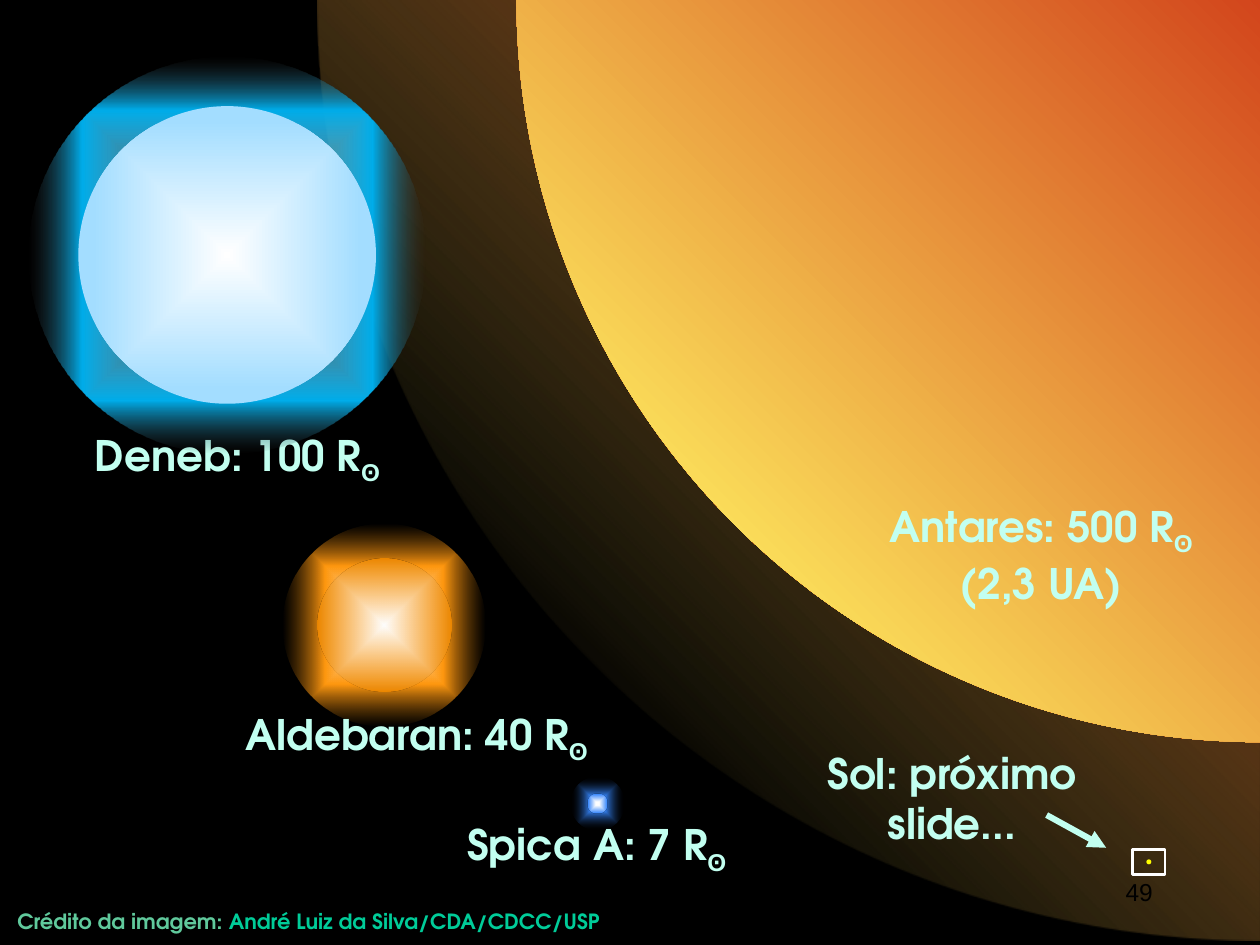
from lxml import etree
from pptx import Presentation
from pptx.dml.color import RGBColor
from pptx.enum.shapes import MSO_CONNECTOR, MSO_SHAPE
from pptx.enum.text import MSO_ANCHOR, PP_ALIGN
from pptx.oxml.ns import qn
from pptx.util import Cm, Pt

OVAL, ARC, RECT = MSO_SHAPE.OVAL, MSO_SHAPE.ARC, MSO_SHAPE.RECTANGLE
LINE = MSO_CONNECTOR.STRAIGHT
LEFT, MID, RIGHT = PP_ALIGN.LEFT, PP_ALIGN.CENTER, PP_ALIGN.RIGHT

BLACK = RGBColor(0, 0, 0)
WHITE = RGBColor(255, 255, 255)
YELLOW = RGBColor(255, 255, 0)
MINT = RGBColor(0xC2, 0xFF, 0xF0)
SAGE = RGBColor(0x60, 0xC9, 0x9C)
GREEN = RGBColor(0x00, 0xCC, 0x99)
GREY = RGBColor(0x38, 0x38, 0x38)
ORANGE = RGBColor(0xFF, 0x98, 0x10)
AMBER = RGBColor(0xEE, 0x88, 0x00)
GOLD = RGBColor(0xFD, 0xE6, 0x5D)
RED = RGBColor(0xC0, 0x00, 0x00)
CORAL = RGBColor(0xFE, 0x73, 0x2F)
SKY = RGBColor(0x69, 0xD8, 0xFF)
BLUE = RGBColor(0x37, 0x88, 0xFF)
CYAN = RGBColor(0x00, 0xAD, 0xEA)
PALE = RGBColor(0xA3, 0xDD, 0xFF)

HEAD = {"name": "TeX Gyre Adventor", "size": Pt(24), "bold": True}
NOTE = {"name": "TeX Gyre Adventor", "size": Pt(12), "bold": True}
PAGE = {"name": "Arial", "size": Pt(14), "bold": False}
SUN = ("ʘ", MINT, -25)
CENTRE = ("shape", {"l": 50, "t": 50, "r": 50, "b": 50})
CORNER = ("circle", {"t": 100, "r": 100})

ALDEBARAN = [(4.09, [(0, WHITE, 100), (58, ORANGE, 100), (100, BLACK, 62)]),
             (2.69, [(0, WHITE, 0), (100, AMBER, 100)])]
ANTARES = [(38, [(13, GOLD, 0), (56, RED, 94), (71, CORAL, 0)]),
           (30, [(12, GOLD, 100), (66, RED, 100)])]
SPICA = [(1.09, [(11, SKY, 0), (25, BLUE, 100), (100, BLACK, 0)]),
         (0.41, [(17, WHITE, 100), (92, BLUE, 100), (100, BLACK, 0)])]
DENEB = [(8, [(0, WHITE, 0), (73, CYAN, 100), (100, GREY, 0)]),
         (6, [(0, WHITE, 100), (90, PALE, 100)])]


def add(parent, tag, **attrs):
    """Append a DrawingML element and return it."""
    return etree.SubElement(parent, qn(tag), attrs)


def shade(shape, stops, kind):
    """Fill a shape with a path gradient of (percent, colour, alpha) stops."""
    path, rect = kind
    shape.fill.gradient()
    grad = shape.element.spPr.find(qn("a:gradFill"))
    for part in list(grad):
        grad.remove(part)
    row = add(grad, "a:gsLst")
    for pos, tint, alpha in stops:
        stop = add(row, "a:gs", pos=str(pos * 1000))
        hue = add(stop, "a:srgbClr", val=str(tint))
        if alpha < 100:
            add(hue, "a:alpha", val=str(alpha * 1000))
    to = add(grad, "a:path", path=path)
    add(to, "a:fillToRect", **{k: str(v * 1000) for k, v in rect.items()})


def star(slide, spot, rings, form=OVAL, kind=CENTRE, turn=0):
    """Draw a halo and a core around one centre as a group."""
    x, y = spot
    group = slide.shapes.add_group_shape()
    for size, stops in rings:
        disc = group.shapes.add_shape(form, Cm(x - size / 2), Cm(y - size / 2),
                                      Cm(size), Cm(size))
        disc.shadow.inherit = False
        disc.rotation = turn
        disc.line.fill.background()
        shade(disc, stops, kind)


def label(slide, box, lines, style=HEAD, align=MID, anchor=MSO_ANCHOR.TOP):
    """Write lines of (text, colour, baseline) runs in a box."""
    frame = slide.shapes.add_textbox(*map(Cm, box)).text_frame
    frame.word_wrap = True
    frame.vertical_anchor = anchor
    for i, line in enumerate(lines):
        para = frame.add_paragraph() if i else frame.paragraphs[0]
        para.alignment = align
        for text, tint, base in line:
            run = para.add_run()
            run.text = text
            for key, value in style.items():
                setattr(run.font, key, value)
            run.font.color.rgb = tint
            if base:
                run.font.name = "Arial"
                run.font._element.set("baseline", str(base * 1000))


def sun(slide, box):
    """Draw the framed Sun and the arrow that points to it."""
    x, y, w, h = box
    frame = slide.shapes.add_shape(RECT, *map(Cm, box))
    frame.fill.background()
    frame.line.color.rgb = WHITE
    frame.line.width = Pt(1.5)
    size = 0.1
    dot = slide.shapes.add_shape(OVAL, Cm(x + w / 2 - size / 2),
                                 Cm(y + h / 2 - size / 2), Cm(size), Cm(size))
    dot.fill.solid()
    dot.fill.fore_color.rgb = YELLOW
    dot.line.fill.background()
    for shape in (frame, dot):
        shape.shadow.inherit = False
    arrow = slide.shapes.add_connector(LINE, Cm(x - 1.73), Cm(y - 0.69),
                                       Cm(x - 0.53), Cm(y - 0.03))
    arrow.line.color.rgb = MINT
    arrow.line.width = Pt(3.5)
    add(arrow.line._get_or_add_ln(), "a:tailEnd", type="triangle")
    add(arrow.element.spPr, "a:effectLst")


def main():
    """Build the slide that compares star sizes."""
    deck = Presentation()
    deck.slide_width, deck.slide_height = Cm(25.4), Cm(19.05)
    slide = deck.slides.add_slide(deck.slide_layouts[6])
    slide.background.fill.solid()
    slide.background.fill.fore_color.rgb = BLACK

    star(slide, (7.75, 12.6), ALDEBARAN)
    label(slide, (0.1, 18.19, 12.5, 0.76),
          [[("Crédito da imagem: ", SAGE, 0),
            ("André Luiz da Silva/CDA/CDCC/USP", GREEN, 0)]], NOTE, LEFT)
    star(slide, (25.41, -0.04), ANTARES, ARC, CORNER, 180)
    label(slide, (17.09, 9.96, 7.8, 3),
          [[("Antares: 500 R", MINT, 0), SUN], [("(2,3 UA)", MINT, 0)]])
    star(slide, (12.05, 16.2), SPICA)
    sun(slide, (22.83, 17.12, 0.66, 0.51))
    for text, x, y in (("Deneb: 100 R", 0.89, 8.53),
                       ("Aldebaran: 40 R", 4.5, 14.15),
                       ("Spica A: 7 R", 8.13, 16.38)):
        label(slide, (x, y, 7.8, 1.27), [[(text, MINT, 0), SUN]])
    label(slide, (15.29, 14.94, 7.8, 3), [[("Sol: próximo slide...", MINT, 0)]])
    star(slide, (4.58, 5.14), DENEB)
    label(slide, (18.21, 17.35, 5.28, 1.27), [[("49", BLACK, 0)]], PAGE, RIGHT,
          MSO_ANCHOR.MIDDLE)
    deck.save("out.pptx")


if __name__ == "__main__":
    main()
